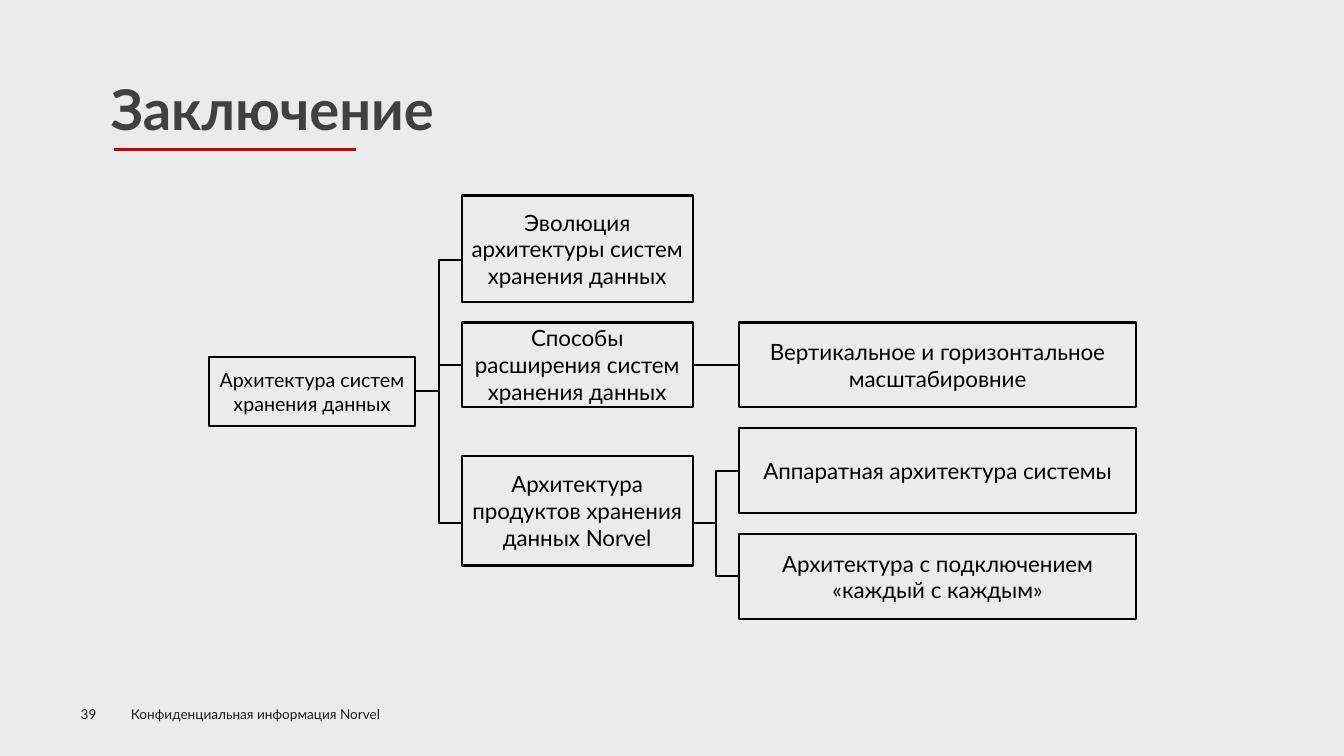
from dataclasses import dataclass

from lxml import etree
from pptx import Presentation
from pptx.dml.color import RGBColor
from pptx.enum.shapes import MSO_CONNECTOR, MSO_SHAPE
from pptx.enum.text import MSO_ANCHOR, PP_ALIGN
from pptx.oxml.ns import qn
from pptx.util import Inches, Pt

RECTANGLE = MSO_SHAPE.RECTANGLE
STRAIGHT, ELBOW = MSO_CONNECTOR.STRAIGHT, MSO_CONNECTOR.ELBOW
MIDDLE, TOP = MSO_ANCHOR.MIDDLE, MSO_ANCHOR.TOP
CENTER, LEFT = PP_ALIGN.CENTER, PP_ALIGN.LEFT


@dataclass(frozen=True)
class Theme:
    font: str = "Lato"
    background: str = "EBEBEB"
    accent: str = "C7000B"
    heading: str = "404040"
    footer: str = "1D1D1B"
    ink: str = "000000"
    heading_size: float = 40
    topic_size: float = 16
    root_size: float = 14
    footer_size: float = 9.7
    box_line: float = 1.5
    accent_line: float = 2.25


THEME = Theme()

# Content
HEADING = "Заключение"
PAGE_NUMBER = "39"
CONFIDENTIALITY = "Конфиденциальная информация Norvel"

# Topic: text, column, top, height, height of its connecting line
TOPICS = {
    "root": ("Архитектура систем хранения данных", 0, 3.54, 0.69, 3.88),
    "evolution": ("Эволюция архитектуры систем хранения данных", 1, 1.94, 1.06, 2.58),
    "expansion": ("Способы расширения систем хранения данных", 1, 3.2, 0.84, 3.62),
    "products": ("Архитектура продуктов хранения данных Norvel", 1, 4.52, 1.09, 5.19),
    "scaling": ("Вертикальное и горизонтальное масштабировние", 2, 3.2, 0.84, 3.62),
    "hardware": ("Аппаратная архитектура системы", 2, 4.25, 0.84, 4.67),
    "mesh": ("Архитектура с подключением «каждый с каждым»", 2, 5.3, 0.84, 5.71),
}
BRANCHES = {
    "root": ("evolution", "expansion", "products"),
    "expansion": ("scaling",),
    "products": ("hardware", "mesh"),
}

# Grid: columns of the tree, separated by an equal gap
TREE_LEFT, COLUMN_GAP = 2.07, 0.46
COLUMN_WIDTHS = (2.05, 2.29, 3.94)
COLUMN_LEFTS = [
    TREE_LEFT + sum(COLUMN_WIDTHS[:i]) + i * COLUMN_GAP
    for i in range(len(COLUMN_WIDTHS))
]

presentation = Presentation()
presentation.slide_width, presentation.slide_height = Inches(13.33), Inches(7.5)
slide = presentation.slides.add_slide(presentation.slide_layouts[6])
slide.background.fill.solid()
slide.background.fill.fore_color.rgb = RGBColor.from_string(THEME.background)


def write(shape, text, size, color, margins, bold=False,
          align=LEFT, anchor=TOP, wrap=True):
    frame = shape.text_frame
    frame.text = text
    frame.word_wrap = wrap
    frame.vertical_anchor = anchor
    frame.margin_left = frame.margin_right = Inches(margins[0])
    frame.margin_top = frame.margin_bottom = Inches(margins[1])
    paragraph = frame.paragraphs[0]
    paragraph.alignment = align
    font = paragraph.runs[0].font
    font.name, font.size, font.bold = THEME.font, Pt(size), bold
    font.color.rgb = RGBColor.from_string(color)


def stroke(line, color, width):
    line.color.rgb = RGBColor.from_string(color)
    line.width = Pt(width)


def connect(kind, start, end, color, width):
    link = slide.shapes.add_connector(kind, *map(Inches, start + end))
    stroke(link.line, color, width)
    etree.SubElement(link._element.spPr, qn("a:effectLst"))


# Footer, page number and heading
for text, area, size, color, margins, bold, wrap in (
    (CONFIDENTIALITY, (1.2, 6.95, 3.12, 0.26), THEME.footer_size, THEME.footer,
     (0.1, 0.05), False, True),
    (PAGE_NUMBER, (0.8, 7, 0.55, 0.16), THEME.footer_size, THEME.footer,
     (0, 0), False, True),
    (HEADING, (1, 0.69, 3.69, 0.77), THEME.heading_size, THEME.heading,
     (0.1, 0.05), True, False),
):
    caption = slide.shapes.add_textbox(*map(Inches, area))
    write(caption, text, size, color, margins, bold=bold, wrap=wrap)
connect(STRAIGHT, (1.13, 1.48), (3.53, 1.48), THEME.accent, THEME.accent_line)

# Branches of the tree
for parent, children in BRANCHES.items():
    _, column, _, _, parent_y = TOPICS[parent]
    start_x = COLUMN_LEFTS[column] + COLUMN_WIDTHS[column]
    for child in children:
        child_y = TOPICS[child][-1]
        connect(STRAIGHT if child_y == parent_y else ELBOW,
                (start_x, parent_y), (start_x + COLUMN_GAP, child_y),
                THEME.ink, THEME.box_line)

# Topics of the tree
for topic, (text, column, top, height, _) in TOPICS.items():
    area = (COLUMN_LEFTS[column], top, COLUMN_WIDTHS[column], height)
    box = slide.shapes.add_shape(RECTANGLE, *map(Inches, area))
    box.shadow.inherit = False
    box.fill.background()
    stroke(box.line, THEME.ink, THEME.box_line)
    size = THEME.root_size if topic == "root" else THEME.topic_size
    write(box, text, size, THEME.ink, (0.04, 0.01), align=CENTER, anchor=MIDDLE)

presentation.save("out.pptx")
